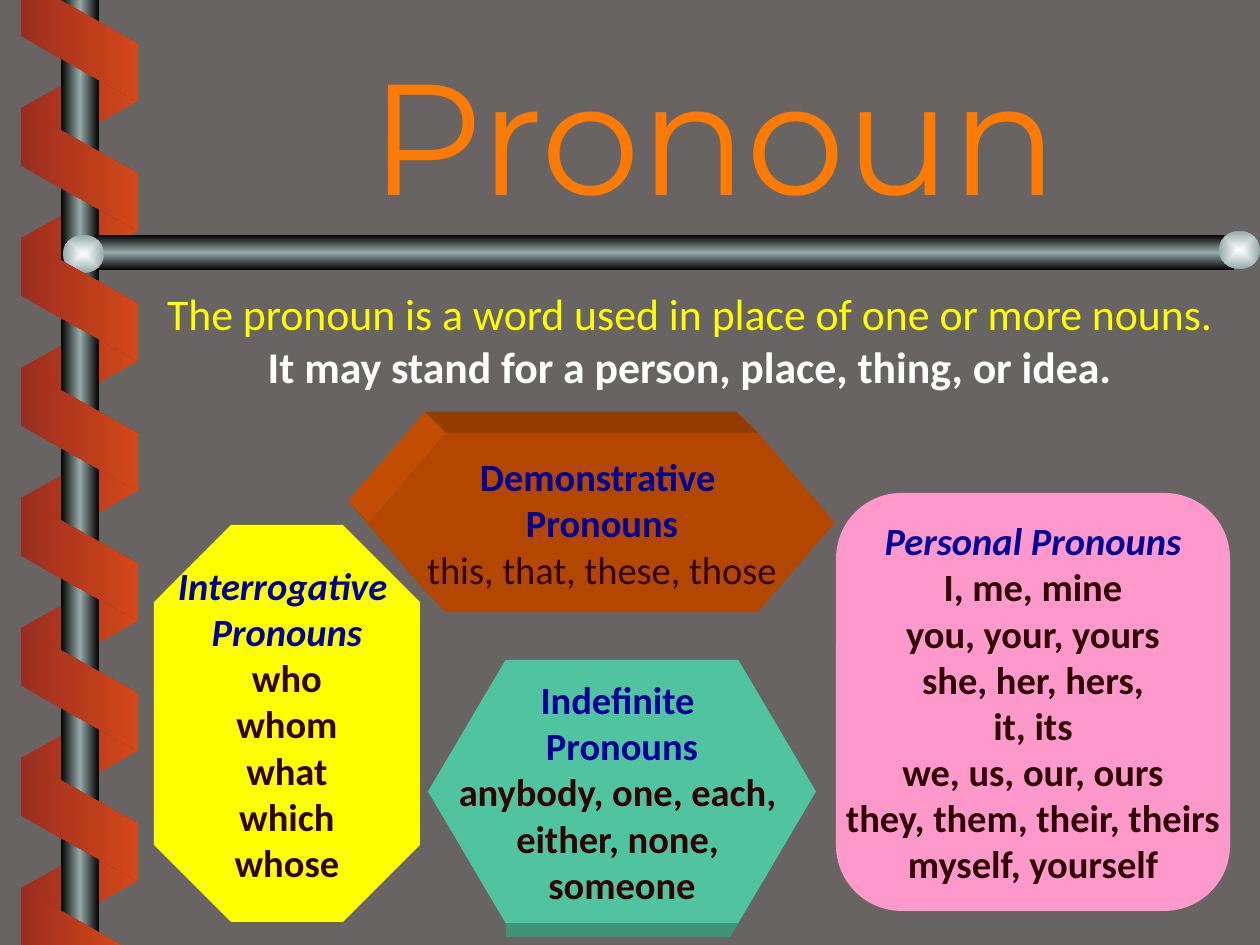
from lxml import etree
from pptx import Presentation
from pptx import util as u
from pptx.dml.color import RGBColor
from pptx.enum import shapes, text
from pptx.oxml import ns

PX = 914400 / 126
KIND = shapes.MSO_SHAPE

GREY = RGBColor(0x69, 0x64, 0x64)
BLACK = RGBColor(0x00, 0x00, 0x00)
STEEL = RGBColor(0x96, 0xA9, 0xA9)
PEARL = RGBColor(0xFE, 0xFF, 0xFF)
RUST = RGBColor(0x9B, 0x2D, 0x1F)
FLAME = RGBColor(0xD3, 0x48, 0x17)
ORANGE = RGBColor(0xFF, 0x7A, 0x00)
YELLOW = RGBColor(0xFF, 0xFF, 0x00)
WHITE = RGBColor(0xFF, 0xFF, 0xFF)
PINK = RGBColor(0xFF, 0x99, 0xCC)
NAVY = RGBColor(0x00, 0x00, 0x99)
MAROON = RGBColor(0x2F, 0x03, 0x03)
BROWN = RGBColor(0xB3, 0x47, 0x00)
BROWN_TOP = RGBColor(0x94, 0x3B, 0x00)
BROWN_LEFT = RGBColor(0xC2, 0x4D, 0x00)
GREEN = RGBColor(0x50, 0xC4, 0x9F)
GREEN_BASE = RGBColor(0x3D, 0x94, 0x78)


def px(length):
    """Turn pixels into EMU."""
    return u.Emu(round(length * PX))


def flat(shape, color=None):
    """Strip shadow and outline, and fill with a colour if given."""
    shape.shadow.inherit = False
    shape.line.fill.background()
    if color is not None:
        shape.fill.solid()
        shape.fill.fore_color.rgb = color
    return shape


def preset(slide, kind, box, color=None):
    """Add a preset shape in a pixel box."""
    return flat(slide.shapes.add_shape(kind, *map(px, box)), color)


def polygon(slide, box, points, color=None):
    """Add a closed outline whose points are relative to the box."""
    left, top = box[:2]
    start, *others = [(left + x, top + y) for x, y in points]
    builder = slide.shapes.build_freeform(*start, scale=PX)
    builder.add_line_segments(others, close=True)
    return flat(builder.convert_to_shape(), color)


def gradient(shape, colors, angle=0, radial=False):
    """Fill a shape with evenly spaced colours, unaffected by its rotation."""
    shape.fill.solid()
    solid = shape.fill._xPr.find(ns.qn("a:solidFill"))
    grad = etree.Element(ns.qn("a:gradFill"), rotWithShape="0")
    stops = etree.SubElement(grad, ns.qn("a:gsLst"))
    for index, color in enumerate(colors):
        position = 100000 * index // (len(colors) - 1)
        stop = etree.SubElement(stops, ns.qn("a:gs"), pos=str(position))
        etree.SubElement(stop, ns.qn("a:srgbClr"), val=str(color))
    if radial:
        path = etree.SubElement(grad, ns.qn("a:path"), path="shape")
        etree.SubElement(path, ns.qn("a:fillToRect"),
                         {side: "50000" for side in "ltrb"})
    else:
        etree.SubElement(grad, ns.qn("a:lin"), ang=str(angle * 60000), scaled="1")
    solid.getparent().replace(solid, grad)


def write(frame, lines, size, font="Calibri", wrap=False):
    """Write centred lines given as (text, colour, bold, italic)."""
    frame.word_wrap = wrap
    frame.text = "\n".join(line[0] for line in lines)
    for paragraph, (_, color, bold, italic) in zip(frame.paragraphs, lines):
        paragraph.alignment = text.PP_ALIGN.CENTER
        for run in paragraph.runs:
            run.font.name = font
            run.font.size = u.Pt(size)
            run.font.bold = bold
            run.font.italic = italic
            run.font.color.rgb = color


def ribbon_bands(slide, box, count, rotation, flipped, colors):
    """Stack equal slanted ribbon bands down from the first band's box."""
    left, top, width, height = box
    for index in range(count):
        band = preset(slide, KIND.PARALLELOGRAM,
                      (left, top + 130 * index, width, height))
        band.adjustments[0] = 0.56
        band.rotation = rotation
        if flipped:
            band._element.spPr.xfrm.set("flipH", "1")
        gradient(band, colors)


def ribbon_ends(slide, box):
    """Draw the cut ribbon pieces at the top and bottom of the box."""
    height = box[3]
    top_end = [(0, 0), (0, 36), (117, 102), (117, 44), (39, 0)]
    bottom_end = [(0, height - 57), (100, height), (0, height)]
    for points in (top_end, bottom_end):
        gradient(polygon(slide, box, points), [RUST, FLAME])


def rods(slide, box):
    """Draw the upright rod, the crossbar and its two knobs."""
    left, top, width, height = box
    steel = [BLACK, STEEL, BLACK]
    gradient(preset(slide, KIND.RECTANGLE, (left, top, 38, height)), steel)
    crossbar = preset(slide, KIND.PENTAGON, (left + 15, top + 235, 1158, 35))
    crossbar.adjustments[0] = 0.58
    crossbar._element.spPr.xfrm.set("flipH", "1")
    gradient(crossbar, steel, 90)
    for x, y in ((left + 2, top + 235), (left + width - 41, top + 231)):
        knob = preset(slide, KIND.OVAL, (x, y, 41, 38))
        gradient(knob, [PEARL, STEEL], radial=True)


def spiral_frame(slide, box):
    """Draw the rods with the ribbon wound around them."""
    left, top, width, height = box
    ribbon_bands(slide, (left + 18, top + 46, 123, 117), 7, 90, True, [FLAME, RUST])
    rods(slide, (left + 61, top, width - 61, height))
    ribbon_bands(slide, (left + 18, top + 111, 123, 117), 6, 270, False, [RUST, FLAME])
    ribbon_ends(slide, (left + 21, top, 117, height))


def pronoun_card(slide, kind, box, color, heading, examples, italic, bold=True):
    """Draw one pronoun group with its heading and examples."""
    card = preset(slide, kind, box, color)
    lines = [(line, NAVY, True, italic) for line in heading]
    lines += [(line, MAROON, bold, False) for line in examples]
    card.text_frame.vertical_anchor = text.MSO_ANCHOR.MIDDLE
    write(card.text_frame, lines, 22)
    return card


def interrogative(slide, box):
    """Draw the octagon of interrogative pronouns."""
    card = pronoun_card(slide, KIND.OCTAGON, box, YELLOW,
                        ["Interrogative ", "Pronouns"],
                        ["who", "whom", "what", "which", "whose"], True)
    card.adjustments[0] = 0.29


def indefinite(slide, box):
    """Draw the raised block of indefinite pronouns."""
    height = box[3]
    base = [(78, height), (311, height), (302, height + 14), (78, height + 14)]
    polygon(slide, box, base, GREEN_BASE)
    pronoun_card(slide, KIND.FLOWCHART_PREPARATION, box, GREEN,
                 ["Indefinite ", "Pronouns"],
                 ["anybody, one, each, ", "either, none, ", "someone"], False)


def personal(slide, box):
    """Draw the rounded card of personal pronouns."""
    pronoun_card(slide, KIND.FLOWCHART_ALTERNATE_PROCESS, box, PINK,
                 ["Personal Pronouns"],
                 ["I, me, mine", "you, your, yours", "she, her, hers,", "it, its",
                  "we, us, our, ours", "they, them, their, theirs",
                  "myself, yourself"], True)


def demonstrative(slide, box):
    """Draw the raised hexagon of demonstrative pronouns."""
    width, height = box[2:]
    depth, slant, middle = 21, 77, height // 2
    corners = [(width - slant, 0), (slant, 0), (0, middle), (slant, height)]
    sides = zip(corners, corners[1:], (BROWN_TOP, BROWN_LEFT, BROWN))
    for (x1, y1), (x2, y2), color in sides:
        side = [(x1, y1), (x2, y2), (x2 - depth, y2 - depth), (x1 - depth, y1 - depth)]
        polygon(slide, box, side, color)
    card = pronoun_card(slide, KIND.HEXAGON, box, BROWN,
                        ["Demonstrative ", "Pronouns"],
                        ["this, that, these, those"], False, False)
    card.adjustments[0] = 0.43


def heading(slide, box):
    """Write the slide title."""
    title = slide.shapes.add_textbox(*map(px, box))
    write(title.text_frame, [("Pronoun", ORANGE, False, False)], 90, "Montserrat")


def definition(slide, box):
    """Write the two lines that define a pronoun."""
    meaning = slide.shapes.add_textbox(*map(px, box))
    write(meaning.text_frame, [
        ("The pronoun is a word used in place of one or more nouns.", YELLOW, False, False),
        ("It may stand for a person, place, thing, or idea.", WHITE, True, False),
    ], 25, wrap=True)


def main():
    """Build and save the slide."""
    deck = Presentation()
    deck.slide_width, deck.slide_height = px(1260), px(945)
    slide = deck.slides.add_slide(deck.slide_layouts[6])
    slide.background.fill.solid()
    slide.background.fill.fore_color.rgb = GREY
    spiral_frame(slide, (0, 0, 1260, 945))
    interrogative(slide, (154, 525, 266, 397))
    indefinite(slide, (428, 660, 388, 263))
    personal(slide, (836, 493, 394, 418))
    demonstrative(slide, (369, 433, 466, 179))
    heading(slide, (343, 32, 743, 204))
    definition(slide, (141, 281, 1097, 118))
    deck.save("out.pptx")


if __name__ == "__main__":
    main()
